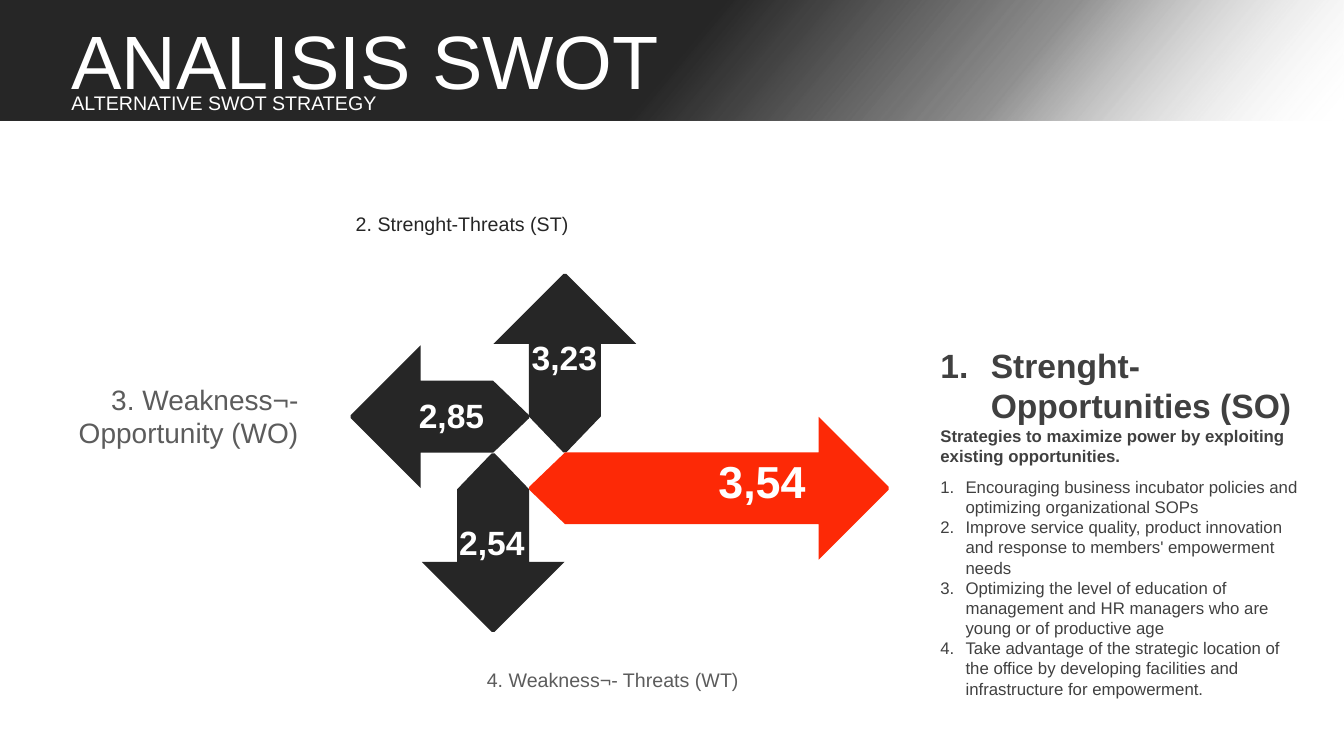
from lxml import etree
from pptx import Presentation
from pptx.dml.color import RGBColor
from pptx.enum.shapes import MSO_SHAPE
from pptx.enum.text import MSO_ANCHOR, PP_ALIGN
from pptx.oxml.ns import qn
from pptx.util import Pt

LEFT, CENTER, RIGHT = PP_ALIGN.LEFT, PP_ALIGN.CENTER, PP_ALIGN.RIGHT
TOP, MIDDLE = MSO_ANCHOR.TOP, MSO_ANCHOR.MIDDLE
RECTANGLE = MSO_SHAPE.RECTANGLE
FONT = "Arial"
COLORS = {"dark": "262626", "red": "FD2906", "white": "FFFFFF",
          "grey": "5C5C5C", "body": "404040"}

# Content: boxes are (left, top, width, height) in points
TITLE = ("ANALISIS SWOT", (43.9, 18, 892.8, 56.9), 54, "white", LEFT)
LABELS = [
    ("3. Weakness¬-Opportunity (WO)", (43.9, 269.3, 176.4, 55.4), 20, "grey", RIGHT),
    ("2. Strenght-Threats (ST)", (119.5, 147.6, 293.8, 24.5), 14, "dark", RIGHT),
    ("4. Weakness¬- Threats (WT)", (340.6, 473, 293.8, 24.5), 14, "grey", LEFT),
    ("ALTERNATIVE SWOT STRATEGY", (43.9, 61.2, 293.8, 24.5), 14, "white", LEFT),
]
# Arrows: tail point, direction, length, colour
ARROWS = [
    ((378, 297.7), (-1, 0), 128.5, "dark"),
    ((403.5, 323.2), (0, -1), 128.5, "dark"),
    ((352.3, 323.8), (0, 1), 128.5, "dark"),
    ((378, 348.8), (1, 0), 257.8, "red"),
]
# Scores: text, left, top, size
SCORES = [("3,54", 499, 320.4, 32), ("3,23", 357.8, 236.9, 24),
          ("2,85", 277.2, 278.6, 24), ("2,54", 306, 369.4, 24)]
SCORE_WIDTH = 90.7
STRATEGY = "Strenght-Opportunities (SO)"
SUMMARY = "Strategies to maximize power by exploiting existing opportunities."
ACTIONS = [
    "Encouraging business incubator policies and optimizing organizational SOPs",
    "Improve service quality, product innovation and response to members' empowerment needs",
    "Optimizing the level of education of management and HR managers who are young or of productive age",
    "Take advantage of the strategic location of the office by developing facilities and infrastructure for empowerment.",
]
PANEL_LEFT, PANEL_WIDTH = 664.6, 272.2
HEADING_TOP, HEADING_HEIGHT, ACTIONS_HEIGHT = 242.6, 94.3, 167
# Banner gradient: position %, colour, opacity %
BANNER_STOPS = [(0, "white", 0), (25, "dark", 50), (50, "dark", 100), (100, "dark", 100)]
BANNER_ANGLE = 220
# Arrow proportions
HEAD, SHAFT, TAPER, BEVEL = 51, 25.7, 25.7, 1

prs = Presentation()
prs.slide_width, prs.slide_height = Pt(960), Pt(540)
slide = prs.slides.add_slide(prs.slide_layouts[6])


def add_box(box, anchor=TOP):
    frame = slide.shapes.add_textbox(*map(Pt, box)).text_frame
    frame.word_wrap = True
    frame.vertical_anchor = anchor
    return frame


def write(paragraph, text, size, color, align=LEFT, bold=False, number_indent=0):
    paragraph.alignment = align
    if number_indent:
        props = paragraph._p.get_or_add_pPr()
        props.set("marL", str(Pt(number_indent)))
        props.set("indent", str(-Pt(number_indent)))
        etree.SubElement(props, qn("a:buFont"), typeface="+mj-lt")
        etree.SubElement(props, qn("a:buAutoNum"), type="arabicPeriod")
    run = paragraph.add_run()
    run.text = text
    run.font.name, run.font.size, run.font.bold = FONT, Pt(size), bold
    run.font.color.rgb = RGBColor.from_string(COLORS[color])


def add_arrow(tail, direction, length, color):
    half = [(0, BEVEL), (TAPER, SHAFT), (length - HEAD, SHAFT),
            (length - HEAD, HEAD), (length - BEVEL, BEVEL)]
    outline = half + [(along, -across) for along, across in reversed(half)]
    (x, y), (dx, dy) = tail, direction
    points = [(Pt(x + along * dx - across * dy), Pt(y + along * dy + across * dx))
              for along, across in outline]
    builder = slide.shapes.build_freeform(*points[0])
    builder.add_line_segments(points[1:])
    arrow = builder.convert_to_shape()
    arrow.shadow.inherit = False
    arrow.fill.solid()
    arrow.fill.fore_color.rgb = RGBColor.from_string(COLORS[color])
    arrow.line.fill.background()


# Banner
banner = slide.shapes.add_shape(RECTANGLE, 0, 0, prs.slide_width, Pt(86.4))
banner.shadow.inherit = False
banner.line.fill.background()
gradient = etree.Element(qn("a:gradFill"), rotWithShape="1")
stops = etree.SubElement(gradient, qn("a:gsLst"))
for position, color, opacity in BANNER_STOPS:
    stop = etree.SubElement(stops, qn("a:gs"), pos=str(position * 1000))
    rgb = etree.SubElement(stop, qn("a:srgbClr"), val=COLORS[color])
    etree.SubElement(rgb, qn("a:alpha"), val=str(opacity * 1000))
etree.SubElement(gradient, qn("a:lin"), ang=str(BANNER_ANGLE * 60000), scaled="0")
banner._element.spPr.find(qn("a:prstGeom")).addnext(gradient)

# Arrows
for arrow_data in ARROWS:
    add_arrow(*arrow_data)

# Title and labels
for text, box, size, color, align in [TITLE] + LABELS:
    label = add_box(box, MIDDLE).paragraphs[0]
    if size == TITLE[2]:
        label.line_spacing = 0.9
    write(label, text, size, color, align)

# Strategy panel
heading = add_box((PANEL_LEFT, HEADING_TOP, PANEL_WIDTH, HEADING_HEIGHT))
write(heading.paragraphs[0], STRATEGY, 24, "body", bold=True, number_indent=36)
write(heading.add_paragraph(), SUMMARY, 12, "body", bold=True)
actions = add_box((PANEL_LEFT, HEADING_TOP + HEADING_HEIGHT, PANEL_WIDTH, ACTIONS_HEIGHT))
for i, action in enumerate(ACTIONS):
    paragraph = actions.add_paragraph() if i else actions.paragraphs[0]
    write(paragraph, action, 12, "body", number_indent=18)

# Scores
for score, left, top, size in SCORES:
    frame = add_box((left, top, SCORE_WIDTH, size * 1.2 + 7.2))
    write(frame.paragraphs[0], score, size, "white", CENTER, bold=True)

prs.save("out.pptx")
